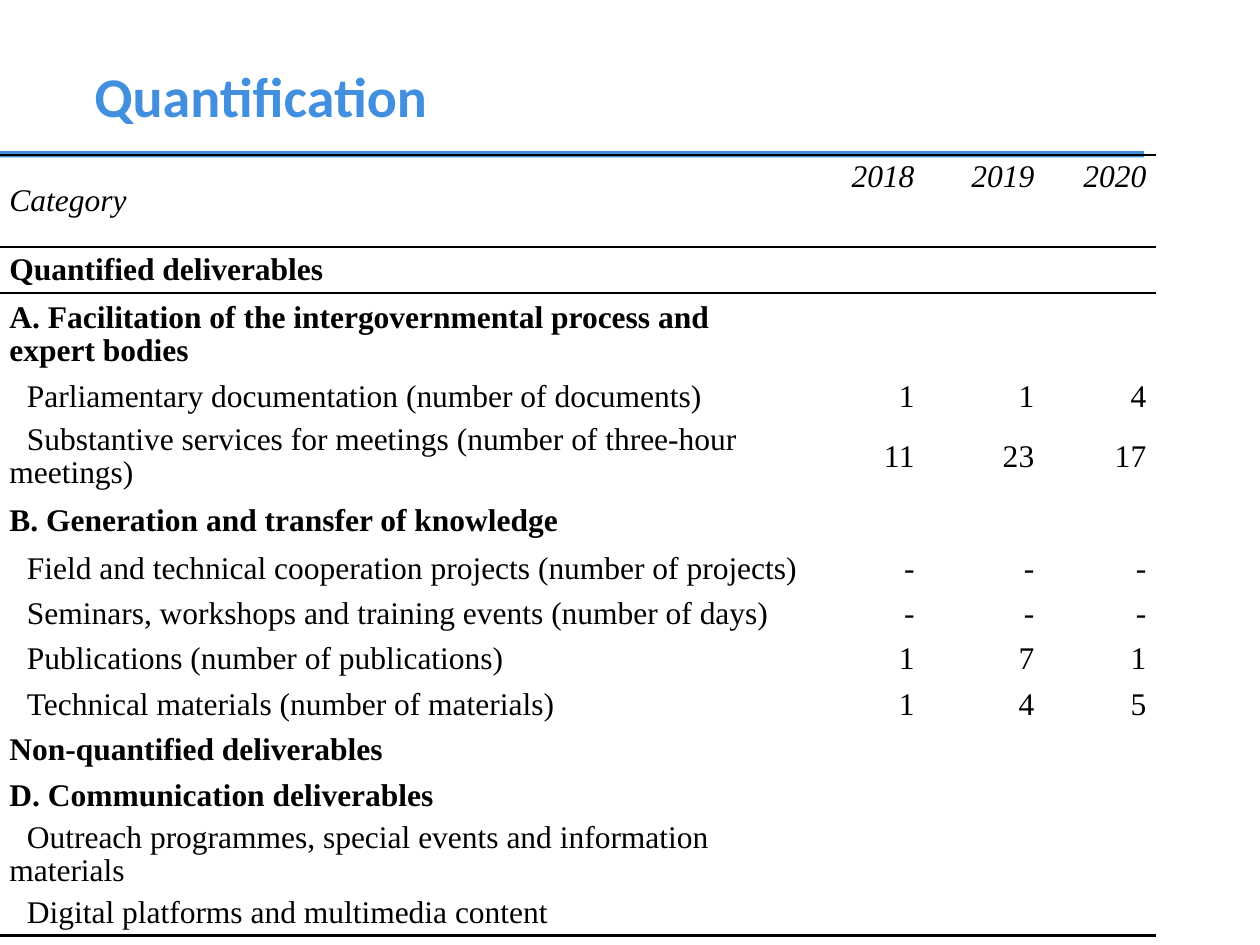
from pptx import Presentation
from pptx.dml.color import RGBColor
from pptx.enum.shapes import MSO_SHAPE as Shape
from pptx.enum.text import MSO_ANCHOR as Anchor, PP_ALIGN as Align
from pptx.oxml.ns import qn
from pptx.util import Pt
from lxml.etree import SubElement

BLUE, BLACK = "418FDE", "000000"
SERIF = "Times New Roman"
NO_STYLE = "{2D5ABB26-0587-4C30-8999-92F81FD0307C}"
COLUMN_WIDTHS = [461.5, 66.5, 68.5, 64]
HEADER_HEIGHTS = [25.7, 27]
YEARS = ["2018", "2019", "2020"]

# Height, label, values; None marks a bold heading
ROWS = [
    (26.3, "Quantified deliverables", None),
    (47.4, "A. Facilitation of the intergovernmental process and expert bodies", None),
    (24, "Parliamentary documentation (number of documents)", ["1", "1", "4"]),
    (44.6, "Substantive services for meetings (number of three-hour meetings)",
     ["11", "23", "17"]),
    (29.1, "B. Generation and transfer of knowledge", None),
    (25.7, "Field and technical cooperation projects (number of projects)",
     ["-", "-", "-"]),
    (25.7, "Seminars, workshops and training events (number of days)",
     ["-", "-", "-"]),
    (26.3, "Publications (number of publications)", ["1", "7", "1"]),
    (25.7, "Technical materials (number of materials)", ["1", "4", "5"]),
    (26.3, "Non-quantified deliverables", None),
    (25.7, "D. Communication deliverables", None),
    (40.6, "Outreach programmes, special events and information materials", []),
    (25.7, "Digital platforms and multimedia content", []),
]


def color(value):
    return RGBColor.from_string(value)


def add_run(paragraph, text, font, size, fill, bold=False, italic=False):
    run = paragraph.add_run()
    run.text = text
    run.font.name, run.font.size = font, Pt(size)
    run.font.bold, run.font.italic = bold, italic
    run.font.color.rgb = color(fill)
    return run


def add_bar(slide):
    bar = slide.shapes.add_shape(Shape.RECTANGLE, Pt(0), Pt(86.4), Pt(653.8), Pt(3.6))
    bar.shadow.inherit = False
    bar.fill.solid()
    bar.fill.fore_color.rgb = color(BLUE)
    bar.line.fill.background()


def add_title(slide, text):
    box = slide.shapes.add_textbox(Pt(46.8), Pt(31.7), Pt(521.3), Pt(33))
    box.text_frame.word_wrap = True
    add_run(box.text_frame.paragraphs[0], text, "Calibri", 32, BLUE, bold=True)


def write_cell(cell, text, align=Align.LEFT, indent=0, spacing=0, **style):
    paragraph = cell.text_frame.paragraphs[0]
    paragraph.alignment = align
    paragraph.line_spacing = 0.95
    if indent:
        properties = paragraph._p.get_or_add_pPr()
        properties.set("marL", "0")
        properties.set("indent", str(Pt(indent)))
    run = add_run(paragraph, text, SERIF, 18, BLACK, **style)
    if spacing:
        run._r.get_or_add_rPr().set("spc", str(spacing))


def add_border(cell, side, width):
    line = SubElement(cell._tc.get_or_add_tcPr(), qn(f"a:ln{side}"), w=str(Pt(width)))
    fill = SubElement(line, qn("a:solidFill"))
    SubElement(fill, qn("a:srgbClr"), val=BLACK)


def add_table(slide):
    heights = HEADER_HEIGHTS + [row[0] for row in ROWS]
    frame = slide.shapes.add_table(len(heights), len(COLUMN_WIDTHS), Pt(0), Pt(88.6),
                                   Pt(sum(COLUMN_WIDTHS)), Pt(sum(heights)))
    table = frame.table
    table.first_row = table.horz_banding = False
    table._tbl.tblPr.find(qn("a:tableStyleId")).text = NO_STYLE
    for column, width in zip(table.columns, COLUMN_WIDTHS):
        column.width = Pt(width)
    for row, height in zip(table.rows, heights):
        row.height = Pt(height)

    # Rules above and below the header and at the foot
    rules = {0: ("T", 1), 1: ("B", 1.5), 2: ("T", 1.5), len(heights) - 1: ("B", 1.5)}
    for index, row in enumerate(table.rows):
        for cell in row.cells:
            cell.margin_left = cell.margin_right = Pt(5.4)
            cell.margin_top = cell.margin_bottom = 0
            cell.vertical_anchor = Anchor.MIDDLE
            if index in rules:
                add_border(cell, *rules[index])
            cell.fill.background()

    # Header
    category = table.cell(0, 0)
    add_border(category, "B", 1.5)
    category.fill.background()
    category._tc.tcPr.append(category._tc.tcPr.find(qn("a:noFill")))
    category.merge(table.cell(1, 0))
    write_cell(category, "Category", italic=True)
    for index, year in enumerate(YEARS, 1):
        write_cell(table.cell(0, index), year, Align.RIGHT, italic=True)

    # Body
    for index, (_, label, values) in enumerate(ROWS, len(HEADER_HEIGHTS)):
        heading = values is None
        write_cell(table.cell(index, 0), label, indent=0 if heading else 10, bold=heading)
        for column, value in enumerate(values or [], 1):
            write_cell(table.cell(index, column), value, Align.RIGHT, spacing=20)


def main():
    presentation = Presentation()
    presentation.slide_width, presentation.slide_height = Pt(720), Pt(540)
    slide = presentation.slides.add_slide(presentation.slide_layouts[6])
    add_bar(slide)
    add_title(slide, "Quantification")
    add_table(slide)
    presentation.save("out.pptx")


if __name__ == "__main__":
    main()
